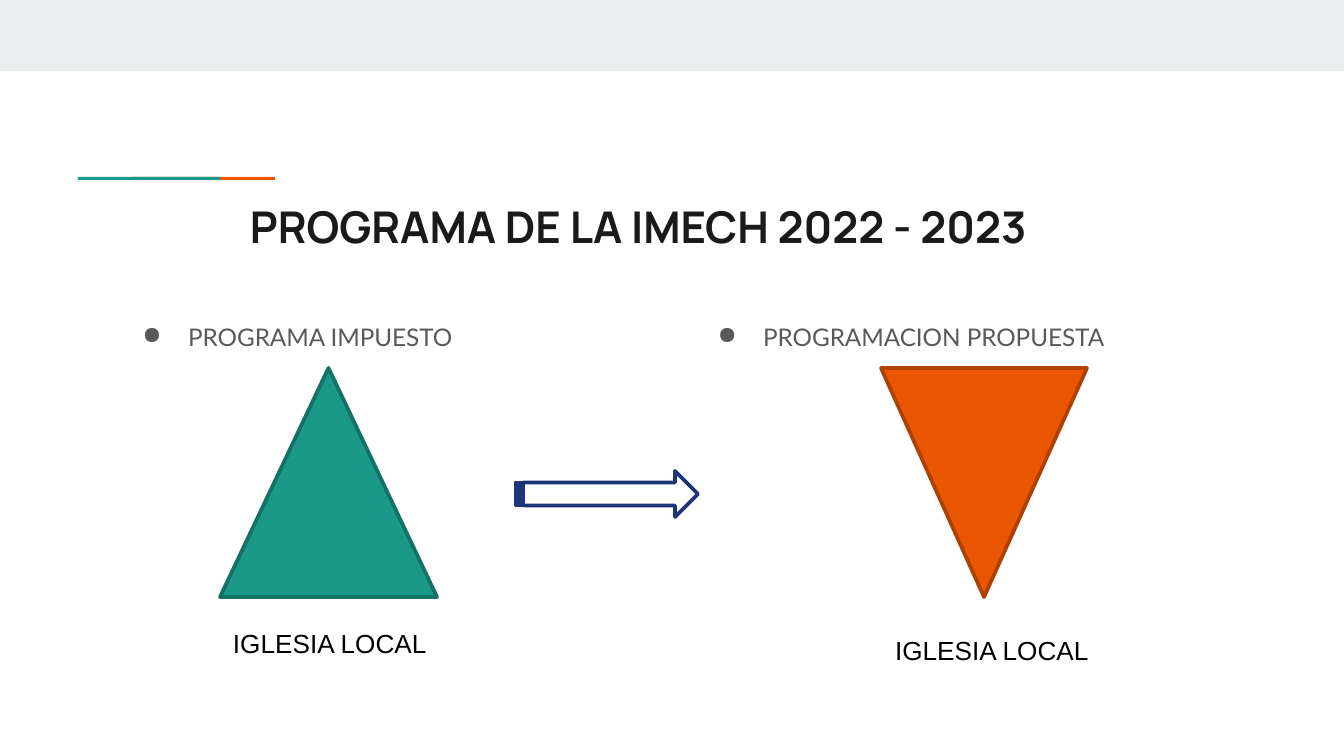
from lxml import etree
from pptx import Presentation
from pptx import util as u
from pptx.dml.color import RGBColor
from pptx.enum import shapes, text
from pptx.oxml.ns import qn

PX = 914400 / 134.4  # EMU in one px
COLORS = {
    "band": "E9EDEE", "teal": "1A9988", "teal_edge": "137165",
    "orange": "EB5600", "orange_edge": "AE4000", "navy": "1C3678",
    "white": "FFFFFF", "title": "1A1A1A", "body": "595959", "label": "000000",
}
FORMATS = {
    "title": {"name": "Manrope", "size": u.Pt(23.4), "bold": True},
    "body": {"name": "Lato", "size": u.Pt(13)},
    "label": {"name": "Arial", "size": u.Pt(14)},
}
KIND = shapes.MSO_SHAPE


def px(value):
    return u.Emu(round(value * PX))


def rgb(name):
    return RGBColor.from_string(COLORS[name])


def add_figure(page, kind, box, fill, edge=None, rotation=0):
    figure = page.shapes.add_shape(kind, *map(px, box))
    figure.shadow.inherit = False
    figure.rotation = rotation
    figure.fill.solid()
    figure.fill.fore_color.rgb = rgb(fill)
    if edge:
        figure.line.color.rgb = rgb(edge)
        figure.line.width = u.Pt(2)
    else:
        figure.line.fill.background()


def add_words(page, box, words, style, inset=13, anchor=text.MSO_ANCHOR.TOP):
    frame = page.shapes.add_textbox(*map(px, box)).text_frame
    settings = {"word_wrap": True, "vertical_anchor": anchor,
                "margin_left": px(13), "margin_right": px(13),
                "margin_top": px(inset), "margin_bottom": px(inset)}
    for key, value in settings.items():
        setattr(frame, key, value)
    para = frame.paragraphs[0]
    span = para.add_run()
    span.text = words
    for key, value in FORMATS[style].items():
        setattr(span.font, key, value)
    span.font.color.rgb = rgb(style)
    return para


def add_bullet(para, color):
    para.line_spacing = 1.15
    props = para._p.get_or_add_pPr()
    props.set("marL", str(u.Inches(0.5)))
    props.set("indent", str(-u.Inches(0.34)))
    tint = etree.SubElement(props, qn("a:buClr"))
    etree.SubElement(tint, qn("a:srgbClr"), val=COLORS[color])
    etree.SubElement(props, qn("a:buChar"), char="●")


def add_header(page, box):
    left, top, width, height = box
    # Top band
    add_figure(page, KIND.RECTANGLE, (left, top, width, 71), "band")
    # Two overlapping accent strokes
    for offset, color in ((133, "orange"), (78, "teal")):
        add_figure(page, KIND.RECTANGLE, (left + offset, top + 177, 142, 3), color)
    # Title
    add_words(page, (left + 237, top + 187, 806, 79),
              "PROGRAMA DE LA IMECH 2022 - 2023", "title",
              anchor=text.MSO_ANCHOR.MIDDLE)


def add_program(page, box, heading, triangle, label, color, rotation=0):
    """Bulleted heading, triangle and caption; inner boxes are relative."""
    left, top = box[:2]

    def inside(part):
        return (left + part[0], top + part[1], *part[2:])

    add_bullet(add_words(page, box, heading, "body"), "body")
    add_figure(page, KIND.ISOSCELES_TRIANGLE, inside(triangle),
               color, color + "_edge", rotation)
    add_words(page, inside(label), "IGLESIA LOCAL", "label", inset=7)


def add_transition(page, box):
    add_figure(page, KIND.STRIPED_RIGHT_ARROW, box, "white", "navy")


def main():
    deck = Presentation()
    deck.slide_width, deck.slide_height = px(1344), px(756)
    page = deck.slides.add_slide(deck.slide_layouts[6])

    add_header(page, (0, 0, 1344, 266))
    # Imposed programme on the left, proposed one on the right
    add_program(page, (108, 305, 555, 332), "PROGRAMA IMPUESTO",
                (112, 63, 217, 229), (112, 315, 234, 46), "teal")
    add_program(page, (683, 305, 555, 332), "PROGRAMACION PROPUESTA",
                (198, 63, 206, 229), (199, 322, 353, 46), "orange", 180)
    add_transition(page, (516, 471, 182, 46))

    deck.save("out.pptx")


if __name__ == "__main__":
    main()
